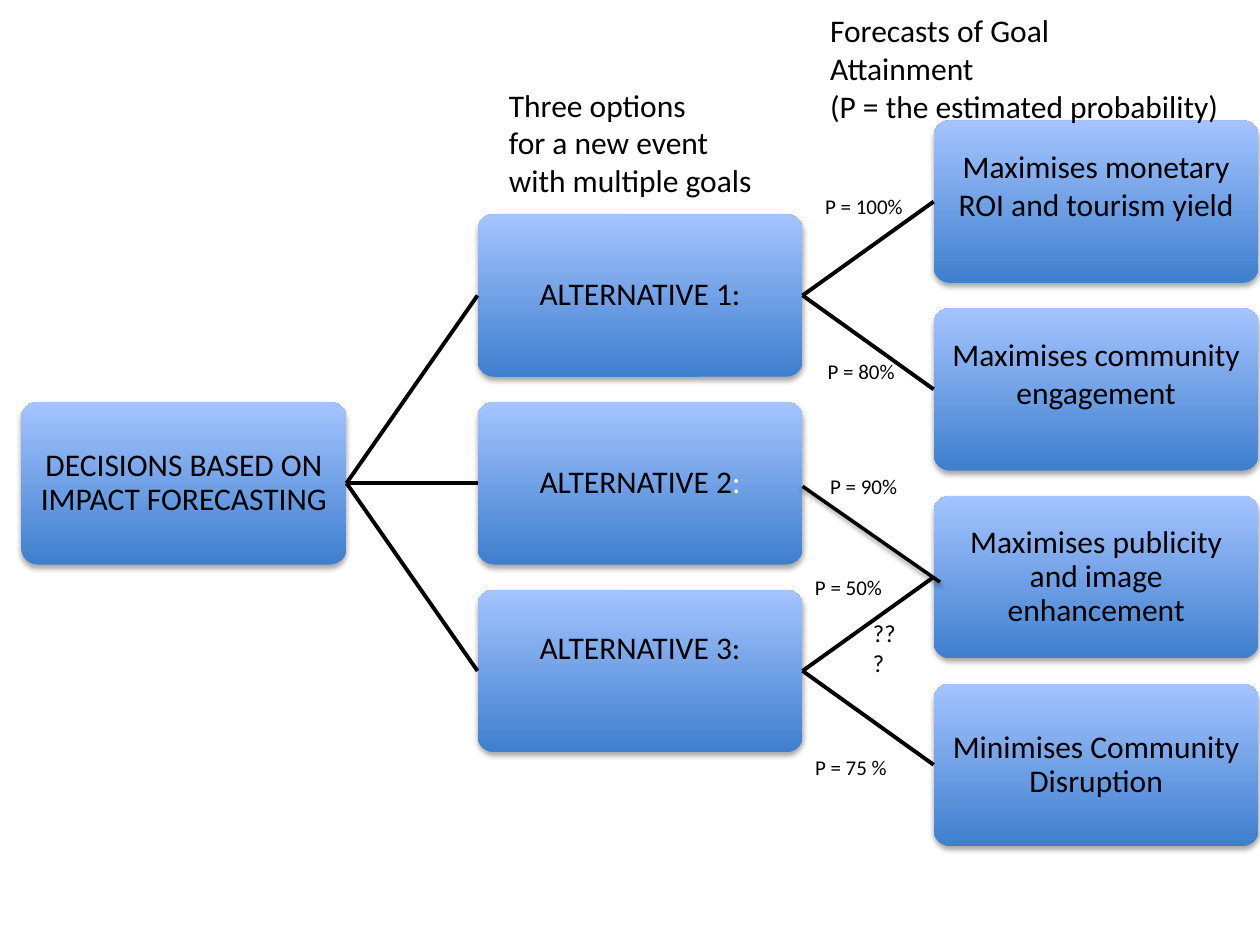
import pptx
import pptx.dml.color
import pptx.enum.shapes
import pptx.enum.text
import pptx.oxml
import pptx.oxml.ns
import pptx.util
from pptx.util import Inches

FONT = "Calibri"
BLACK, WHITE = "000000", "FFFFFF"
GRADIENT = ("3F7FCE", "A4C4FF")
BOX_WIDTH, BOX_HEIGHT = 2.58, 1.29
LEFT, MIDDLE_TOP = 0.17, 3.19
COLUMN_STEP, ROW_STEP = 3.62, 1.49
RIGHT_SIDE, LEFT_SIDE = 3, 1

ALTERNATIVES = [
    ([("ALTERNATIVE 1:", BLACK)], {}),
    ([("ALTERNATIVE 2", BLACK), (":", WHITE)], {}),
    ([("ALTERNATIVE 3:", BLACK)], {"lift": 0.35}),
]
GOALS = [
    ("Maximises monetary ROI and tourism yield", {"lift": 0.26, "spacing": 1.0}),
    ("Maximises community engagement", {"lift": 0.26, "spacing": 1.0}),
    ("Maximises publicity and image enhancement", {}),
    ("Minimises Community Disruption", {}),
]
GOAL_LINKS = [(0, 0), (0, 1), (2, 2), (2, 3)]
LABELS = [
    (3.94, 0.63, 2.28, 1.01, 18,
     ["Three options", "for a new event", "with multiple goals"]),
    (6.49, 0.04, 3.64, 1.01, 18,
     ["Forecasts of Goal", "Attainment", "(P = the estimated probability)"]),
    (6.45, 1.49, 0.93, 0.3, 12, ["P = 100%"]),
    (6.47, 2.8, 0.84, 0.3, 12, ["P = 80%"]),
    (6.49, 3.71, 0.84, 0.3, 12, ["P = 90%"]),
    (6.37, 4.51, 0.84, 0.3, 12, ["P = 50%"]),
    (6.83, 4.86, 0.46, 0.34, 14, ["???"]),
    (6.37, 5.94, 0.89, 0.3, 12, ["P = 75 %"]),
]


def color(value):
    """Return the colour for a hex string."""
    return pptx.dml.color.RGBColor.from_string(value)


def apply(target, values):
    """Set each named attribute on the target."""
    for name, value in values.items():
        setattr(target, name, value)


def set_shadow(shape, opacity=0, distance=0):
    """Give the shape a soft downward shadow, or none at zero opacity."""
    effects = pptx.oxml.parse_xml(
        f'<a:effectLst {pptx.oxml.ns.nsdecls("a")}>'
        f'<a:outerShdw blurRad="{pptx.util.Pt(3.1)}" dist="{pptx.util.Pt(distance)}"'
        ' dir="5400000" rotWithShape="0"><a:srgbClr val="000000">'
        f'<a:alpha val="{opacity * 1000}"/></a:srgbClr></a:outerShdw></a:effectLst>')
    if not opacity:
        effects.remove(effects[0])
    shape.element.spPr.append(effects)


def add_span(para, text, size, value=BLACK):
    """Append formatted text to a paragraph."""
    span = para.add_run()
    span.text = text
    apply(span.font, {"name": FONT, "size": pptx.util.Pt(size)})
    span.font.color.rgb = color(value)


def add_box(page, column, row, spans, lift=0, spacing=0.9):
    """Add a gradient box at a column, with its row counted from the middle."""
    box = page.shapes.add_shape(
        pptx.enum.shapes.MSO_SHAPE.ROUNDED_RECTANGLE,
        Inches(LEFT + column * COLUMN_STEP), Inches(MIDDLE_TOP + row * ROW_STEP),
        Inches(BOX_WIDTH), Inches(BOX_HEIGHT))
    box.adjustments[0] = 0.1
    box.line.fill.background()
    box.fill.gradient()
    box.fill.gradient_angle = 90
    for stop, value in zip(box.fill.gradient_stops, GRADIENT):
        stop.color.rgb = color(value)
    set_shadow(box, 35, 1.8)
    margin = Inches(0.05)
    apply(box.text_frame, {
        "word_wrap": True,
        "vertical_anchor": pptx.enum.text.MSO_ANCHOR.MIDDLE,
        "margin_left": margin, "margin_right": margin,
        "margin_top": margin, "margin_bottom": margin + Inches(lift)})
    para = box.text_frame.paragraphs[0]
    apply(para, {"alignment": pptx.enum.text.PP_ALIGN.CENTER, "line_spacing": spacing})
    for text, value in spans:
        add_span(para, text, 18, value)
    return box


def add_line(page, start=(0, 0), end=(0, 0), width=2.25):
    """Add a straight black line between two points."""
    line = page.shapes.add_connector(
        pptx.enum.shapes.MSO_CONNECTOR.STRAIGHT, *map(Inches, (*start, *end)))
    line.line.width = pptx.util.Pt(width)
    line.line.color.rgb = color(BLACK)
    return line


def join(page, source, target):
    """Link the right side of one box to the left side of another."""
    line = add_line(page)
    line.begin_connect(source, RIGHT_SIDE)
    line.end_connect(target, LEFT_SIDE)
    set_shadow(line)


def add_label(page, left, top, width, height, size, lines):
    """Add an unwrapped text box with one paragraph per line."""
    box = page.shapes.add_textbox(*map(Inches, (left, top, width, height)))
    frame = box.text_frame
    frame.word_wrap = False
    for index, text in enumerate(lines):
        para = frame.add_paragraph() if index else frame.paragraphs[0]
        add_span(para, text, size)


def main():
    """Build the decision tree slide."""
    deck = pptx.Presentation()
    apply(deck, {"slide_width": Inches(10), "slide_height": Inches(7.5)})
    page = deck.slides.add_slide(deck.slide_layouts[6])

    decision = add_box(page, 0, 0, [("DECISIONS BASED ON IMPACT FORECASTING", BLACK)])
    alternatives = [add_box(page, 1, index - 1, spans, **layout)
                    for index, (spans, layout) in enumerate(ALTERNATIVES)]
    goals = [add_box(page, 2, index - 1.5, [(text, BLACK)], **layout)
             for index, (text, layout) in enumerate(GOALS)]

    for alternative in alternatives:
        join(page, decision, alternative)
    for source, target in GOAL_LINKS:
        join(page, alternatives[source], goals[target])
    publicity_line = add_line(page, (6.37, 3.86), (7.46, 4.62), 2)
    set_shadow(publicity_line, 38, 1.6)

    for label in LABELS:
        add_label(page, *label)
    deck.save("out.pptx")


if __name__ == "__main__":
    main()
